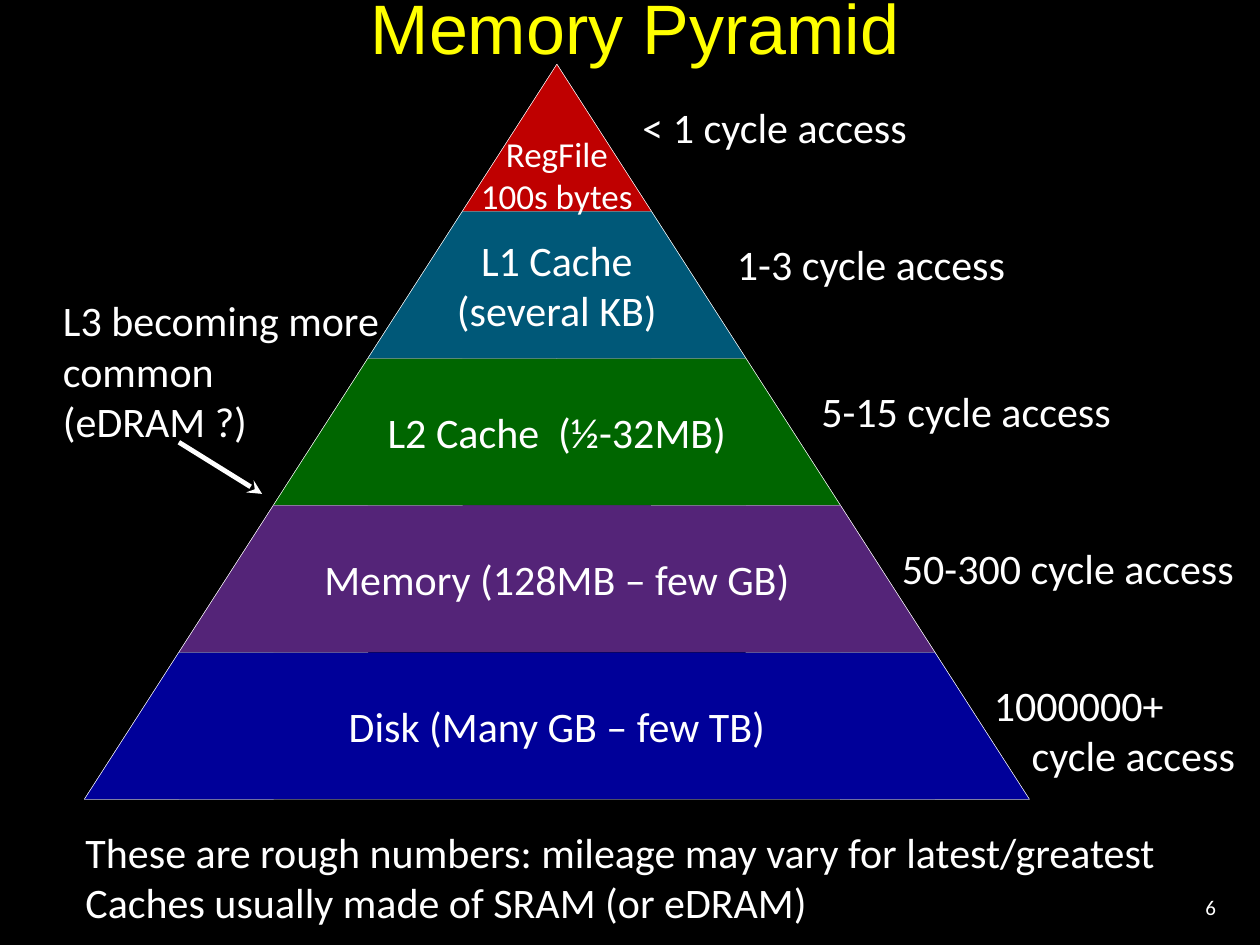
import pptx
import pptx.util
import pptx.dml.color
import pptx.enum.shapes
import pptx.enum.text
import pptx.oxml.ns
import lxml.etree

Inches, Pt = pptx.util.Inches, pptx.util.Pt
SHAPE = pptx.enum.shapes.MSO_SHAPE
ALIGN = pptx.enum.text.PP_ALIGN
ANCHOR = pptx.enum.text.MSO_ANCHOR
AUTO = pptx.enum.text.MSO_AUTO_SIZE

COLORS = {
    "background": "000000", "text": "FFFFFF", "title": "FFFF00",
    "registers": "BF0000", "l1": "005878", "l2": "006600",
    "memory": "542478", "disk": "000099",
}
TITLE = "Memory Pyramid"
TIERS = [  # color, lines, from the tip down
    ("registers", ["RegFile", "100s bytes"]),
    ("l1", ["L1 Cache", "(several KB)"]),
    ("l2", ["L2 Cache  (½-32MB)"]),
    ("memory", ["Memory (128MB – few GB)"]),
    ("disk", ["Disk (Many GB – few TB)"]),
]
ACCESS_TIMES = [  # text, left, top, width
    ("< 1 cycle access", 5, 0.76, 2.32),
    ("1-3 cycle access", 5.75, 1.84, 2.35),
    ("5-15 cycle access", 6.42, 3.01, 2.52),
    ("50-300 cycle access", 7.06, 4.26, 2.86),
]
DISK_ACCESS = ["1000000+", "cycle access"]
L3_NOTE = "L3 becoming more common\v(eDRAM ?)"
FOOTNOTE = ("These are rough numbers: mileage may vary for latest/greatest\v"
            "Caches usually made of SRAM (or eDRAM)")
PAGE = "6"

APEX_X, APEX_Y = 4.42, 0.51
HALF = 0.75          # growth of each side per tier
TIER_H = 3.5 / 3


def color(name):
    return pptx.dml.color.RGBColor.from_string(COLORS[name])


def write(sp, lines, size=24, align=ALIGN.LEFT, anchor=ANCHOR.TOP, wrap=False,
          font="Calibri", ink="text"):
    tf = sp.text_frame
    tf.word_wrap = wrap
    tf.vertical_anchor = anchor
    tf.text = "\n".join(lines)
    for p in tf.paragraphs:
        p.alignment = align
        p.font.size = Pt(size)
        p.font.name = font
        p.font.color.rgb = color(ink)
    return tf


def add_label(slide, lines, x, y, w, h, **style):
    sp = slide.shapes.add_textbox(Inches(x), Inches(y), Inches(w), Inches(h))
    tf = write(sp, lines, **style)
    tf.auto_size = AUTO.SHAPE_TO_FIT_TEXT
    return tf


def add_block(shapes, kind, x, y, w, h, fill=None, outlined=True):
    sp = shapes.add_shape(kind, Inches(x), Inches(y), Inches(w), Inches(h))
    sp.shadow.inherit = False
    if fill:
        sp.fill.solid()
        sp.fill.fore_color.rgb = color(fill)
    else:
        sp.fill.background()
    if outlined:
        sp.line.color.rgb = color("text")
        sp.line.width = Pt(0.25)
    else:
        sp.line.fill.background()
    return sp


def add_tier(slide, row, fill, lines):
    """The tip is one triangle; lower tiers are a bar between two triangles."""
    y = APEX_Y + row * TIER_H
    if row == 0:
        sp = add_block(slide.shapes, SHAPE.ISOSCELES_TRIANGLE,
                       APEX_X - HALF, y, 2 * HALF, TIER_H, fill)
        write(sp, lines, 20, ALIGN.CENTER, ANCHOR.MIDDLE)
        return
    group = slide.shapes.add_group_shape()
    reach = row * HALF
    for x in (APEX_X - reach, APEX_X + reach):
        add_block(group.shapes, SHAPE.ISOSCELES_TRIANGLE,
                  x - HALF, y, 2 * HALF, TIER_H, fill)
    bar = add_block(group.shapes, SHAPE.RECTANGLE, APEX_X - reach, y,
                    2 * reach, TIER_H, fill, outlined=False)
    write(bar, lines, 24, ALIGN.CENTER, ANCHOR.MIDDLE)


def add_arrow(slide, x1, y1, x2, y2):
    qn = pptx.oxml.ns.qn
    line = slide.shapes.add_connector(
        pptx.enum.shapes.MSO_CONNECTOR.STRAIGHT,
        Inches(x1), Inches(y1), Inches(x2), Inches(y2))
    line.line.color.rgb = color("text")
    line.line.width = Pt(2.75)
    lxml.etree.SubElement(line.line._get_or_add_ln(), qn("a:tailEnd"), type="stealth")
    lxml.etree.SubElement(line._element.spPr, qn("a:effectLst"))


def main():
    prs = pptx.Presentation()
    prs.slide_width, prs.slide_height = Inches(10), Inches(7.5)
    slide = prs.slides.add_slide(prs.slide_layouts[5])
    slide.background.fill.solid()
    slide.background.fill.fore_color.rgb = color("background")

    add_block(slide.shapes, SHAPE.ISOSCELES_TRIANGLE,
              APEX_X - len(TIERS) * HALF, APEX_Y,
              2 * len(TIERS) * HALF, len(TIERS) * TIER_H)
    for row, (fill, lines) in reversed(list(enumerate(TIERS))):
        add_tier(slide, row, fill, lines)

    title = slide.shapes.title
    title.left, title.top = Inches(0.25), Inches(0)
    title.width, title.height = Inches(9.58), Inches(0.42)
    tf = write(title, [TITLE], 40, ALIGN.CENTER, ANCHOR.MIDDLE, True, "Arial", "title")
    tf.auto_size = AUTO.NONE

    for text, x, y, w in ACCESS_TIMES:
        add_label(slide, [text], x, y, w, 0.5)
    tf = add_label(slide, DISK_ACCESS, 7.79, 5.34, 2.13, 0.91, wrap=True)
    tf.paragraphs[1]._p.get_or_add_pPr().set("marL", str(Inches(0.3)))

    tf = add_label(slide, [L3_NOTE], 0.5, 2.34, 2.67, 1.21, wrap=True)
    tf.margin_left = tf.margin_right = tf.margin_top = tf.margin_bottom = 0
    add_arrow(slide, 1.42, 3.51, 2.08, 3.92)

    add_label(slide, [FOOTNOTE], 0.58, 6.51, 9.17, 0.91, wrap=True)
    tf = add_label(slide, [PAGE], 8.92, 7, 0.83, 0.4, size=12,
                   align=ALIGN.RIGHT, anchor=ANCHOR.MIDDLE, wrap=True)
    tf.auto_size = AUTO.NONE

    prs.save("out.pptx")


if __name__ == "__main__":
    main()
